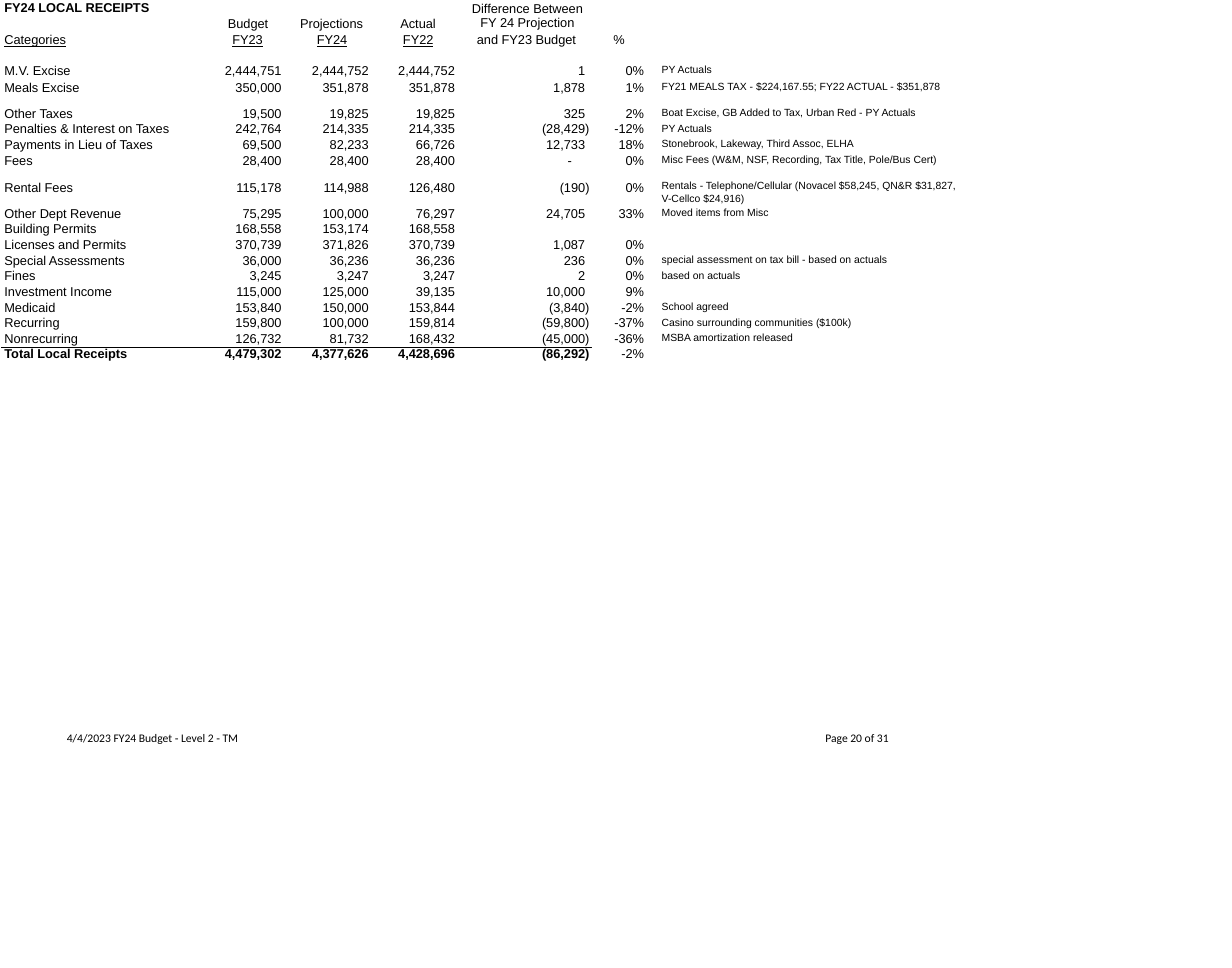
from lxml import etree
from pptx import Presentation
from pptx.dml.color import RGBColor
from pptx.enum.text import MSO_ANCHOR, PP_ALIGN
from pptx.oxml.ns import qn
from pptx.util import Inches, Pt

LEFT, CENTER, RIGHT = PP_ALIGN.LEFT, PP_ALIGN.CENTER, PP_ALIGN.RIGHT
TOP = MSO_ANCHOR.TOP
BLACK = "000000"
BODY_SIZE, NOTE_SIZE, FOOTER_SIZE = 10.5, 8.5, 9.5

COLUMN_WIDTHS = [2.24, 1.04, 1.05, 0.91, 1.47, 0.69, 3.57]
RIGHT_MARGINS = [0, 0.1, 0.16, 0.09, 0.08, 0.1, 0.05]
DIFFERENCE, PERCENT, NOTE = 4, 5, 6
SINGLE = 1.6 / 9  # nine plain rows share 1.6 inches

# (text, left margin, top margin, line pitch, alignment, bold, underline)
HEADINGS = [
    [("FY24 LOCAL RECEIPTS", 0.03, 0, 11.8, LEFT, True, False),
     ("Budget", 0.33, 0.18, 12.2, LEFT, False, False),
     ("Projections", 0.11, 0.18, 12.2, LEFT, False, False),
     ("Actual", 0.2, 0.18, 12.2, LEFT, False, False),
     ("Difference Between\nFY 24 Projection", 0, 0, 12.2, CENTER, False, False)],
    [("Categories", 0.03, 0, 12.2, LEFT, False, True),
     ("FY23", 0.38, 0, 12.2, LEFT, False, True),
     ("FY24", 0.3, 0, 12.2, LEFT, False, True),
     ("FY22", 0.23, 0, 12.2, LEFT, False, True),
     ("and FY23 Budget", 0.16, 0, 12.2, LEFT, False, False),
     ("%", 0, 0, 12.2, CENTER, False, False)],
]
HEADING_HEIGHTS = [0.36, 0.27]

# (row height, top margin, line pitch, cell texts)
RECEIPTS = [
    (0.27, 0.08, 12.2, ["M.V. Excise", "2,444,751", "2,444,752", "2,444,752", "1", "0%",
                        "PY Actuals"]),
    (0.24, 0, 12.3, ["Meals Excise", "350,000", "351,878", "351,878", "1,878", "1%",
                     "FY21 MEALS TAX - $224,167.55; FY22 ACTUAL - $351,878"]),
    (0.24, 0.06, 12.2, ["Other Taxes", "19,500", "19,825", "19,825", "325", "2%",
                        "Boat Excise, GB Added to Tax, Urban Red - PY Actuals"]),
    (SINGLE, 0, 11.8, ["Penalties & Interest on Taxes", "242,764", "214,335", "214,335",
                       "(28,429)", "-12%", "PY Actuals"]),
    (SINGLE, 0, 11.8, ["Payments in Lieu of Taxes", "69,500", "82,233", "66,726",
                       "12,733", "18%", "Stonebrook, Lakeway, Third Assoc, ELHA"]),
    (0.24, 0, 12.3, ["Fees", "28,400", "28,400", "28,400", "-", "0%",
                     "Misc Fees (W&M, NSF, Recording, Tax Title, Pole/Bus Cert)"]),
    (0.36, 0.06, 12.2, ["Rental Fees", "115,178", "114,988", "126,480", "(190)", "0%",
                        "Rentals - Telephone/Cellular (Novacel $58,245, QN&R $31,827, "
                        "V-Cellco $24,916)"]),
    (SINGLE, 0, 12.1, ["Other Dept Revenue", "75,295", "100,000", "76,297", "24,705",
                       "33%", "Moved items from Misc"]),
    (SINGLE, 0, 11.8, ["Building Permits", "168,558", "153,174", "168,558", "", "", ""]),
    (SINGLE, 0, 11.8, ["Licenses and Permits", "370,739", "371,826", "370,739", "1,087",
                       "0%", ""]),
    (SINGLE, 0, 11.8, ["Special Assessments", "36,000", "36,236", "36,236", "236", "0%",
                       "special assessment on tax bill - based on actuals"]),
    (SINGLE, 0, 11.8, ["Fines", "3,245", "3,247", "3,247", "2", "0%",
                       "based on actuals"]),
    (SINGLE, 0, 11.8, ["Investment Income", "115,000", "125,000", "39,135", "10,000",
                       "9%", ""]),
    (SINGLE, 0, 11.8, ["Medicaid", "153,840", "150,000", "153,844", "(3,840)", "-2%",
                       "School agreed"]),
    (SINGLE, 0, 11.8, ["Recurring", "159,800", "100,000", "159,814", "(59,800)", "-37%",
                       "Casino surrounding communities ($100k)"]),
    (SINGLE, 0, 11.8, ["Nonrecurring", "126,732", "81,732", "168,432", "(45,000)", "-36%",
                       "MSBA amortization released"]),
    (0.17, 0, 11.5, ["Total Local Receipts", "4,479,302", "4,377,626", "4,428,696",
                     "(86,292)", "-2%", ""]),
]


def color(value):
    return RGBColor.from_string(value)


def format_text(frame, size, pitch, font="Arial", align=LEFT, bold=False, underline=False):
    """Style every paragraph; a pitch of Pt is fixed, a float is a multiple."""
    for paragraph in frame.paragraphs:
        paragraph.alignment = align
        paragraph.line_spacing = pitch
        for run in paragraph.runs:
            run.font.name = font
            run.font.size = Pt(size)
            run.font.bold = bold
            run.font.underline = underline
            run.font.color.rgb = color(BLACK)


def fill_cell(cell, text, left, top, right, size, pitch, **style):
    cell.vertical_anchor = TOP
    cell.margin_left, cell.margin_top = Inches(left), Inches(top)
    cell.margin_right, cell.margin_bottom = Inches(right), 0
    cell.text_frame.text = text
    format_text(cell.text_frame, size, pitch, **style)


def clear_cell(cell):
    """Remove fill and margins, and keep an empty cell from stretching its row."""
    cell.fill.background()
    cell.margin_left = cell.margin_right = cell.margin_top = cell.margin_bottom = 0
    end = etree.SubElement(cell.text_frame.paragraphs[0]._p, qn("a:endParaRPr"))
    end.set("sz", "800")


def rule_cell(cell, side):
    line = etree.Element(qn(f"a:ln{side}"), w=str(Pt(1)))
    fill = etree.SubElement(line, qn("a:solidFill"))
    etree.SubElement(fill, qn("a:srgbClr"), val=BLACK)
    cell._tc.get_or_add_tcPr().insert(0, line)


def difference_margin(text):
    """Line up digits, leaving closing brackets to hang at the right."""
    if text == "-":
        return 0.23
    return 0.03 if text.endswith(")") else RIGHT_MARGINS[DIFFERENCE]


def fill_receipt_row(table, row, top, pitch, texts):
    is_total = texts[0].startswith("Total")
    for column, text in enumerate(texts):
        if not text:
            continue
        cell = table.cell(row, column)
        bold = is_total and column < PERCENT
        right = difference_margin(text) if column == DIFFERENCE else RIGHT_MARGINS[column]
        if column == NOTE:
            note_pitch = 1.07 if len(text) > 60 else Pt(10.1)
            fill_cell(cell, text, 0.1, top, right, NOTE_SIZE, note_pitch)
        else:
            left, align = (0.03, LEFT) if column == 0 else (0, RIGHT)
            fill_cell(cell, text, left, top, right, BODY_SIZE, Pt(pitch),
                      align=align, bold=bold)


def add_receipts_table(slide, left, top):
    heights = HEADING_HEIGHTS + [receipt[0] for receipt in RECEIPTS]
    table = slide.shapes.add_table(
        len(heights), len(COLUMN_WIDTHS), Inches(left), Inches(top),
        Inches(sum(COLUMN_WIDTHS)), Inches(sum(heights))).table
    table.first_row = table.horz_banding = False
    for column, width in zip(table.columns, COLUMN_WIDTHS):
        column.width = Inches(width)
    for row, height in zip(table.rows, heights):
        row.height = Inches(height)
    for cell in table.iter_cells():
        clear_cell(cell)
    table.cell(0, NOTE).merge(table.cell(1, NOTE))

    for row, headings in enumerate(HEADINGS):
        for column, heading in enumerate(headings):
            text, indent, drop, pitch, align, bold, underline = heading
            right = 0.08 if column == PERCENT else 0
            fill_cell(table.cell(row, column), text, indent, drop, right, BODY_SIZE,
                      Pt(pitch), align=align, bold=bold, underline=underline)
    for row, (_, drop, pitch, texts) in enumerate(RECEIPTS, len(HEADINGS)):
        fill_receipt_row(table, row, drop, pitch, texts)
    total_row = len(heights) - 1
    for column in range(PERCENT):
        rule_cell(table.cell(total_row - 1, column), "B")
        rule_cell(table.cell(total_row, column), "T")


def add_footer(slide, text, left, top, width):
    frame = slide.shapes.add_textbox(
        Inches(left), Inches(top), Inches(width), Inches(0.16)).text_frame
    frame.word_wrap = True
    frame.margin_left = Inches(0.01)
    frame.margin_right = frame.margin_top = frame.margin_bottom = 0
    frame.text = text
    format_text(frame, FOOTER_SIZE, Pt(10.3), font="Calibri")


def main():
    deck = Presentation()
    deck.slide_width, deck.slide_height = Inches(14), Inches(11)
    slide = deck.slides.add_slide(deck.slide_layouts[6])
    add_footer(slide, "4/4/2023 FY24 Budget ‐ Level 2 ‐ TM", 0.75, 8.32, 2.2)
    add_footer(slide, "Page 20 of 31", 9.37, 8.32, 0.87)
    add_receipts_table(slide, 0.02, 0.01)
    deck.save("out.pptx")


if __name__ == "__main__":
    main()
